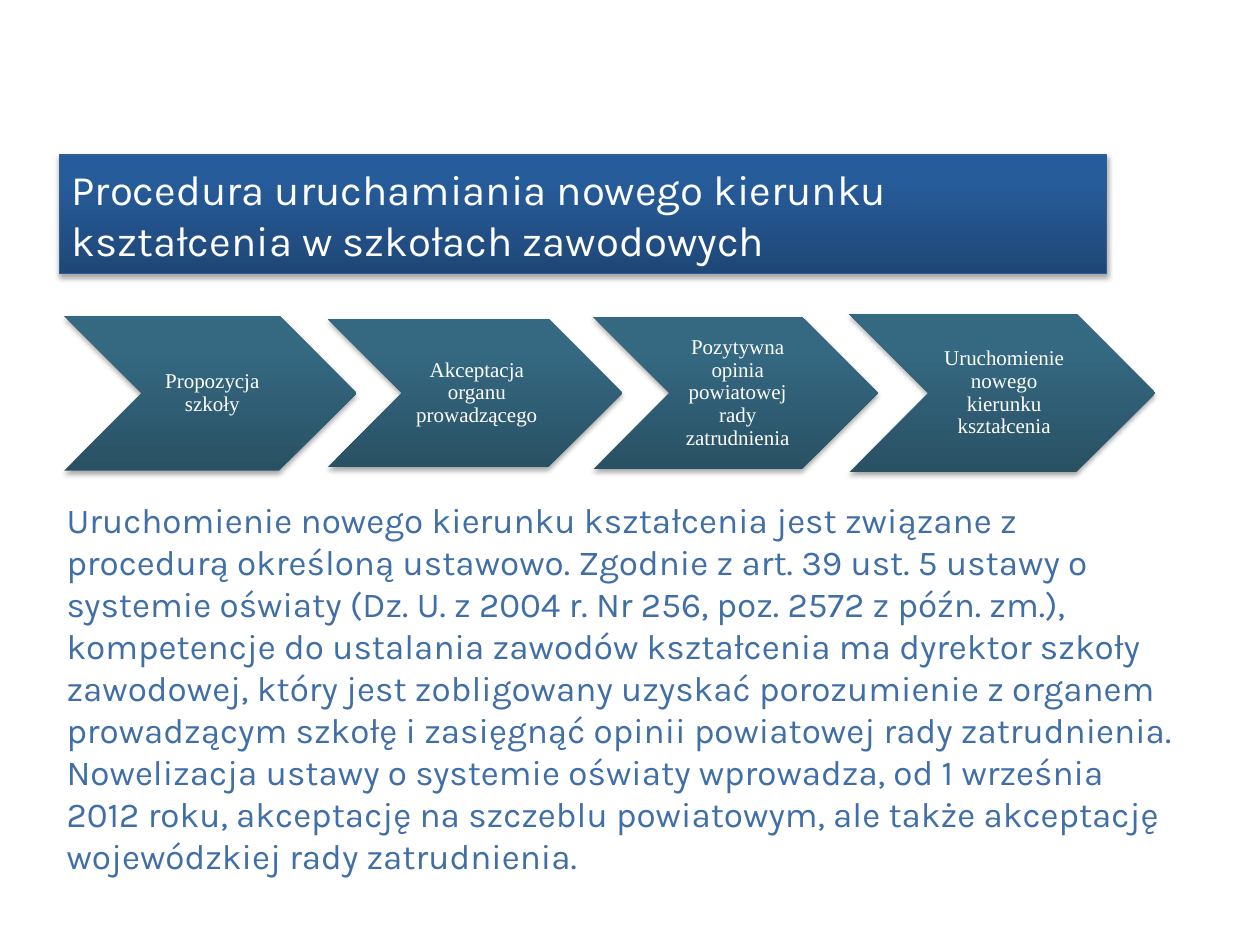
"""Build a slide with a title bar, four process chevrons and a paragraph."""
from copy import deepcopy
from lxml import etree
from pptx import Presentation, util as u
from pptx.dml.color import RGBColor
from pptx.enum import shapes, text
from pptx.oxml.ns import qn

WHITE = RGBColor(0xFF, 0xFF, 0xFF)
BLUE = RGBColor(0x40, 0x6E, 0xA6)
EDGE = RGBColor(0x33, 0x5E, 0x91)
NAVY = [RGBColor(0x1E, 0x47, 0x77), RGBColor(0x27, 0x5C, 0x9B), RGBColor(0x25, 0x5C, 0x9E)]
TEAL = [RGBColor(0x29, 0x51, 0x64), RGBColor(0x35, 0x69, 0x82), RGBColor(0x34, 0x6A, 0x84)]

deck = Presentation()
deck.slide_width, deck.slide_height = u.Inches(10), u.Inches(7.5)
cell = deck.slide_width / 100
page = deck.slides.add_slide(deck.slide_layouts[6])


def block(kind, spot, tones):
    item = page.shapes.add_shape(kind, *[round(n * cell) for n in spot])
    item.fill.gradient()
    item.fill.gradient_angle = 90
    stops = item.element.spPr.find(".//" + qn("a:gsLst"))
    stops.append(deepcopy(stops[-1]))
    for stop, place, tone in zip(item.fill.gradient_stops, (0, 0.8, 1), tones):
        stop.position, stop.color.rgb = place, tone
    item.line.fill.background()
    item.shadow.inherit = False
    glow = etree.SubElement(item.element.spPr.find(qn("a:effectLst")), qn("a:outerShdw"),
                            blurRad=str(u.Pt(3.1)), dist=str(u.Pt(1.8)),
                            dir="5400000", rotWithShape="0")
    tint = etree.SubElement(glow, qn("a:srgbClr"), val="000000")
    etree.SubElement(tint, qn("a:alpha"), val="35000")
    return item


def write(item, words, font, frame, para):
    body = item.text_frame
    body.word_wrap = True
    line = body.paragraphs[0]
    line.text = words
    line.font.color.rgb = font.pop("color")
    for target, look in ((body, frame), (line, para), (line.font, font)):
        for key, value in look.items():
            setattr(target, key, value)


note = page.shapes.add_textbox(*[round(n * cell) for n in (4.3, 39.1, 90, 28.2)])
write(note,
      "Uruchomienie nowego kierunku kształcenia jest związane z procedurą określoną ustawowo. "
      "Zgodnie z art. 39 ust. 5 ustawy o systemie oświaty (Dz. U. z 2004 r. Nr 256, poz. 2572 "
      "z późn. zm.), kompetencje do ustalania zawodów kształcenia ma dyrektor szkoły zawodowej, "
      "który jest zobligowany uzyskać porozumienie z organem prowadzącym szkołę i zasięgnąć "
      "opinii powiatowej rady zatrudnienia. Nowelizacja ustawy o systemie oświaty wprowadza, "
      "od 1 września 2012 roku, akceptację na szczeblu powiatowym, ale także akceptację "
      "wojewódzkiej rady zatrudnienia.",
      {"name": "Karla", "size": u.Pt(20), "color": BLUE},
      {"vertical_anchor": text.MSO_ANCHOR.TOP},
      {"alignment": text.PP_ALIGN.LEFT, "space_after": u.Pt(6)})

bar = block(shapes.MSO_SHAPE.RECTANGLE, (4.7, 12.3, 83.1, 9.4), NAVY)
bar.line.color.rgb, bar.line.width = EDGE, u.Pt(0.75)
write(bar, "Procedura uruchamiania nowego kierunku kształcenia w szkołach zawodowych",
      {"name": "Karla", "size": u.Pt(24), "color": WHITE},
      {"vertical_anchor": text.MSO_ANCHOR.MIDDLE},
      {"alignment": text.PP_ALIGN.LEFT})

steps = [
    ("Propozycja szkoły", 5.1, 23.2, 12.3),
    ("Akceptacja organu prowadzącego", 26, 23.4, 11.8),
    ("Pozytywna opinia powiatowej rady zatrudnienia", 47.1, 22.6, 12.1),
    ("Uruchomienie nowego kierunku kształcenia", 67.4, 24.3, 12.6),
]
axis = 31.2
rim = u.Inches(0.02)
for words, left, wide, high in steps:
    top = axis - high / 2
    block(shapes.MSO_SHAPE.CHEVRON, (left, top, wide, high), TEAL)
    inner = (left + high / 2, top, wide - high, high)
    label = page.shapes.add_textbox(*[round(n * cell) for n in inner])
    write(label, words,
          {"name": "Times New Roman", "size": u.Pt(12), "color": WHITE},
          {"vertical_anchor": text.MSO_ANCHOR.MIDDLE, "margin_left": u.Inches(0.05),
           "margin_right": rim, "margin_top": rim, "margin_bottom": rim},
          {"alignment": text.PP_ALIGN.CENTER, "line_spacing": 0.9})

deck.save("out.pptx")
